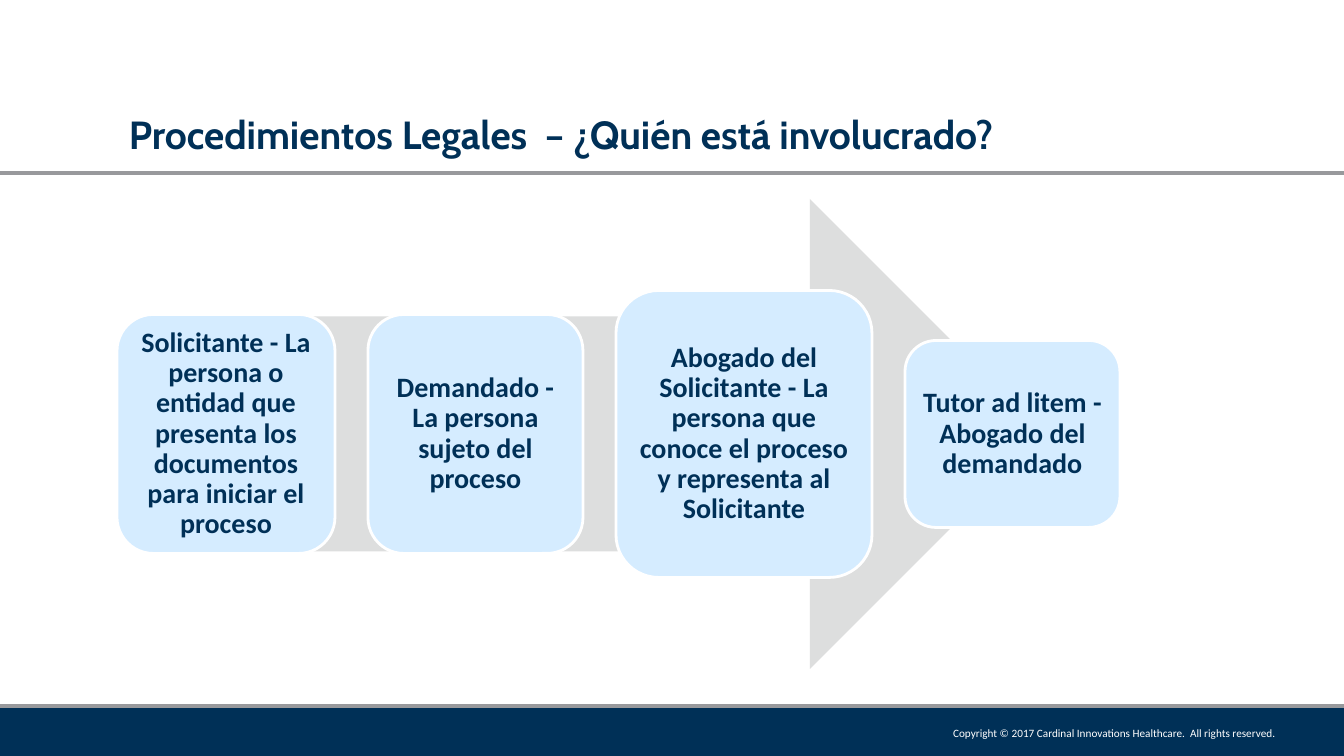
import pptx
import pptx.util
import pptx.dml.color
import pptx.enum.shapes
import pptx.enum.text
from dataclasses import dataclass

# Content
TITLE = "Procedimientos Legales  – ¿Quién está involucrado?"
COPYRIGHT = "Copyright © 2017 Cardinal Innovations Healthcare.  All rights reserved."
# Each participant: text, card width, card height (px)
PARTICIPANTS = [
    ("Solicitante - La persona o entidad que presenta los documentos para iniciar el proceso", 218, 239),
    ("Demandado - La persona sujeto del proceso", 215, 239),
    ("Abogado del Solicitante - La persona que conoce el proceso y representa al Solicitante", 256, 287),
    ("Tutor ad litem - Abogado del demandado", 215, 187),
]

# Layout in px
PAGE_WIDTH, PAGE_HEIGHT = 1344, 756
TITLE_BOX = (-44, 105, 1210, 45)
COPYRIGHT_BOX = (712, 721, 564, 24)
FOOTER_TOP = 708
RULE_HEIGHTS = (173, 706)
ARROW_LEFT, ARROW_WIDTH, ARROW_HEIGHT = 192, 853, 470
FLOW_MIDDLE = 434
FIRST_CARD_LEFT, CARD_GAP, CARD_INSET = 117, 33, 8


@dataclass(frozen=True)
class Theme:
    navy: str = "003057"
    gray: str = "98999C"
    arrow: str = "DDDEDE"
    card: str = "D5ECFF"
    white: str = "FFFFFF"
    title_font: str = "Cabin"
    body_font: str = "Calibri"
    title_size: int = 28
    card_size: int = 20
    copyright_size: int = 8
    rule_width: int = 3
    card_border: int = 2


THEME = Theme()
SHAPE = pptx.enum.shapes.MSO_SHAPE
ALIGN = pptx.enum.text.PP_ALIGN
ANCHOR = pptx.enum.text.MSO_ANCHOR


def px(length):
    return pptx.util.Emu(round(length * 914400 / 100.8))


def place(box):
    return [px(length) for length in box]


def color(code):
    return pptx.dml.color.RGBColor.from_string(code)


def write(frame, text, font, size, ink, align, bold=False):
    frame.word_wrap = True
    para = frame.paragraphs[0]
    para.text = text
    para.alignment = align
    para.font.name = font
    para.font.size = pptx.util.Pt(size)
    para.font.bold = bold
    para.font.color.rgb = color(ink)
    return para


def add_filled(page, kind, box, fill):
    shape = page.shapes.add_shape(kind, *place(box))
    shape.shadow.inherit = False
    shape.fill.solid()
    shape.fill.fore_color.rgb = color(fill)
    shape.line.fill.background()
    return shape


def add_rule(page, y):
    rule = page.shapes.add_connector(
        pptx.enum.shapes.MSO_CONNECTOR.STRAIGHT, *place((0, y, PAGE_WIDTH, y)))
    rule.line.color.rgb = color(THEME.gray)
    rule.line.width = pptx.util.Pt(THEME.rule_width)
    rule._element.spPr.append(pptx.oxml.parse_xml(
        '<a:effectLst xmlns:a="http://schemas.openxmlformats.org/drawingml/2006/main"/>'))


def add_card(page, text, box):
    card = add_filled(page, SHAPE.ROUNDED_RECTANGLE, box, THEME.card)
    card.line.color.rgb = color(THEME.white)
    card.line.width = pptx.util.Pt(THEME.card_border)
    frame = card.text_frame
    frame.margin_left = frame.margin_right = px(CARD_INSET)
    frame.margin_top = frame.margin_bottom = px(CARD_INSET)
    frame.vertical_anchor = ANCHOR.MIDDLE
    para = write(frame, text, THEME.body_font, THEME.card_size, THEME.navy, ALIGN.CENTER, True)
    para.line_spacing = 0.9


def main():
    deck = pptx.Presentation()
    deck.slide_width, deck.slide_height = px(PAGE_WIDTH), px(PAGE_HEIGHT)
    page = deck.slides.add_slide(deck.slide_layouts[5])

    # Footer band, copyright line and rules
    add_filled(page, SHAPE.RECTANGLE,
               (0, FOOTER_TOP, PAGE_WIDTH, PAGE_HEIGHT - FOOTER_TOP), THEME.navy)
    notice = page.shapes.add_textbox(*place(COPYRIGHT_BOX)).text_frame
    notice.margin_right = 0
    write(notice, COPYRIGHT, THEME.body_font, THEME.copyright_size, THEME.white, ALIGN.RIGHT)
    for y in RULE_HEIGHTS:
        add_rule(page, y)

    # Title
    title = page.shapes.title
    title.left, title.top, title.width, title.height = place(TITLE_BOX)
    title.text_frame.auto_size = pptx.enum.text.MSO_AUTO_SIZE.NONE
    title.text_frame.vertical_anchor = ANCHOR.TOP
    write(title.text_frame, TITLE, THEME.title_font, THEME.title_size,
          THEME.navy, ALIGN.CENTER, True)

    # Arrow behind the cards
    add_filled(page, SHAPE.RIGHT_ARROW,
               (ARROW_LEFT, FLOW_MIDDLE - ARROW_HEIGHT / 2, ARROW_WIDTH, ARROW_HEIGHT),
               THEME.arrow)

    # Cards share a middle line and an equal gap
    left = FIRST_CARD_LEFT
    for text, width, height in PARTICIPANTS:
        add_card(page, text, (left, FLOW_MIDDLE - height / 2, width, height))
        left += width + CARD_GAP

    deck.save("out.pptx")


if __name__ == "__main__":
    main()
